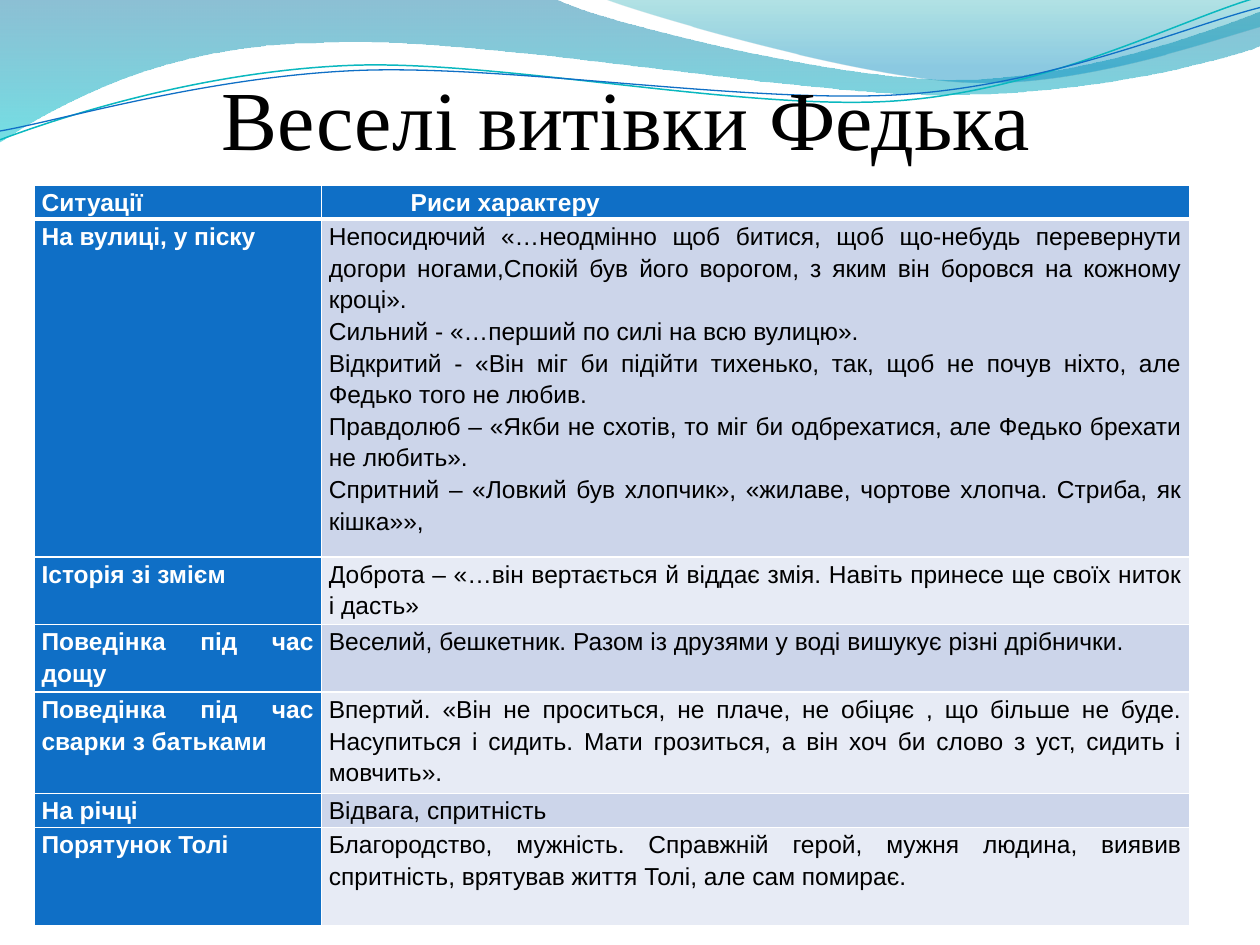
from lxml import etree
from pptx import Presentation
from pptx.dml.color import RGBColor
from pptx.enum.text import MSO_ANCHOR, MSO_AUTO_SIZE, PP_ALIGN
from pptx.oxml.ns import qn
from pptx.util import Inches, Pt

JUSTIFY = PP_ALIGN.JUSTIFY
MIDDLE = MSO_ANCHOR.MIDDLE
GROW = MSO_AUTO_SIZE.SHAPE_TO_FIT_TEXT
BLANK_LAYOUT = 6

COLORS = {
    "black": "000000", "white": "FFFFFF", "blue": "0F6FC6",
    "band_dark": "CCD5EA", "band_light": "E7EBF5", "teal_line": "0AB8BF",
    "deep_blue": "0074A1", "cyan": "00C6CF",
    "sea_green": "00A1A9", "sky_blue": "008BBF",
}
FONTS = {
    "title": {"name": "Times New Roman", "size": Pt(48)},
    "label": {"name": "Arial", "size": Pt(14), "bold": True},
    "body": {"name": "Arial", "size": Pt(14), "bold": False},
}

WAVES = [
    {"start": (0, -0.01), "closed": True,
     "segments": [
         (4.4, -0.01), (4.76, 0.17, 6.64, 0.63, 7.58, 0.63),
         (8.53, 0.63, 9.58, 0.26, 10, 0.09), (10.01, 0.36),
         (9.83, 0.44, 8.7, 0.76, 7.46, 0.75), (6.22, 0.75, 3.82, 0.28, 2.57, 0.34),
         (1.29, 0.35, 0.46, 0.83, -0.01, 1.13), (0, -0.01)],
     "gradient": [(0, "deep_blue", 45), (1, "cyan", 55)]},
    {"start": (4.79, -0.01), "closed": True,
     "segments": [
         (5.09, 0.11, 6.82, 0.62, 7.69, 0.65),
         (8.56, 0.69, 9.61, 0.32, 10, 0.21), (10, 0), (4.79, -0.01)],
     "gradient": [(0, "sea_green", 30), (0.8, "sky_blue", 45)]},
    {"start": (0, 1.11), "closed": False,
     "segments": [
         (0.48, 0.93, 1.58, 0.57, 2.77, 0.52), (3.95, 0.47, 5.93, 0.89, 7.13, 0.8),
         (8.33, 0.71, 9.38, 0.15, 9.98, -0.02)],
     "line": ("teal_line", 0.85)},
    {"start": (0, 1.04), "closed": False,
     "segments": [
         (0.47, 0.96, 1.64, 0.61, 2.83, 0.56), (4.03, 0.51, 5.97, 0.83, 7.17, 0.75),
         (8.36, 0.67, 9.41, 0.21, 10, 0.06)],
     "line": ("blue", 0.75)},
]

COLUMN_WIDTHS = [2.28, 6.89]
ROWS = [
    (0.26, "Ситуації", ["Риси характеру"]),
    (2.64, "На вулиці, у піску", [
        "Непосидючий «…неодмінно щоб битися, щоб що-небудь перевернути догори ногами,Спокій був його ворогом, з яким він боровся на кожному кроці».",
        "Сильний - «…перший по силі на всю вулицю».",
        "Відкритий - «Він міг би підійти тихенько, так, щоб не почув ніхто, але Федько того не любив.",
        "Правдолюб – «Якби не схотів, то міг би одбрехатися, але Федько брехати не любить».",
        "Спритний – «Ловкий був хлопчик», «жилаве, чортове хлопча. Стриба, як кішка»»,"]),
    (0.52, "Історія зі змієм", [
        "Доброта – «…він вертається й віддає змія. Навіть принесе ще своїх ниток і дасть»"]),
    (0.52, "Поведінка під час дощу", [
        "Веселий, бешкетник. Разом із друзями у воді вишукує різні дрібнички."]),
    (0.78, "Поведінка під час сварки з батьками", [
        "Впертий. «Він не проситься, не плаче, не обіцяє , що більше не буде. Насупиться і сидить. Мати грозиться, а він хоч би слово з уст, сидить і мовчить»."]),
    (0.26, "На річці", ["Відвага, спритність"]),
    (0.78, "Порятунок Толі", [
        "Благородство, мужність. Справжній герой, мужня людина, виявив спритність, врятував життя Толі, але сам помирає."]),
]


def color(name):
    return RGBColor.from_string(COLORS[name])


def set_attributes(target, values):
    for name, value in values.items():
        setattr(target, name, value)


def bend_segments(shape, segments):
    lines = list(shape._element.spPr.iter(qn("a:lnTo")))
    for line, segment in zip(lines, segments):
        if len(segment) == 2:
            continue
        curve = etree.Element(qn("a:cubicBezTo"))
        for x, y in zip(segment[::2], segment[1::2]):
            etree.SubElement(curve, qn("a:pt"), x=str(Inches(x) - shape.left),
                             y=str(Inches(y) - shape.top))
        line.getparent().replace(line, curve)


def fill_gradient(shape, stops):
    shape.fill.gradient()
    shape.fill.gradient_angle = 270
    for stop, (position, name, _) in zip(shape.fill.gradient_stops, stops):
        stop.position = position
        stop.color.rgb = color(name)
    tints = shape._element.spPr.iter(qn("a:srgbClr"))
    for tint, (_, _, opacity) in zip(tints, stops):
        etree.SubElement(tint, qn("a:alpha"), val=str(opacity * 1000))


def add_wave(slide, wave):
    x, y = wave["start"]
    builder = slide.shapes.build_freeform(Inches(x), Inches(y))
    ends = [(Inches(segment[-2]), Inches(segment[-1])) for segment in wave["segments"]]
    builder.add_line_segments(ends, close=wave["closed"])
    shape = builder.convert_to_shape()
    bend_segments(shape, wave["segments"])
    shape.shadow.inherit = False
    if "gradient" in wave:
        fill_gradient(shape, wave["gradient"])
        shape.line.fill.background()
    else:
        name, width = wave["line"]
        shape.fill.background()
        shape.line.color.rgb = color(name)
        shape.line.width = Pt(width)


def write_paragraphs(frame, texts, font, color_name, spacing=1.0):
    for index, text in enumerate(texts):
        paragraph = frame.paragraphs[0] if index == 0 else frame.add_paragraph()
        set_attributes(paragraph, {"alignment": JUSTIFY, "line_spacing": spacing})
        run = paragraph.add_run()
        run.text = text
        set_attributes(run.font, font)
        run.font.color.rgb = color(color_name)


def add_title(slide, text):
    box = slide.shapes.add_textbox(Inches(1.66), Inches(0.47), Inches(6.68), Inches(0.91))
    set_attributes(box.text_frame, {
        "word_wrap": False, "auto_size": GROW, "vertical_anchor": MIDDLE})
    write_paragraphs(box.text_frame, [text], FONTS["title"], "black")


def set_borders(cell, widths):
    properties = cell._tc.get_or_add_tcPr()
    for side, width in widths.items():
        line = etree.SubElement(properties, qn(f"a:ln{side}"), w=str(Pt(width)))
        solid = etree.SubElement(line, qn("a:solidFill"))
        etree.SubElement(solid, qn("a:srgbClr"), val=COLORS["white"])


def format_cell(cell, texts, row, column):
    header = row == 0
    label = header or column == 0
    indent = 0.65 if header and column == 1 else 0
    set_attributes(cell, {
        "margin_left": Inches(0.06 + indent), "margin_right": Inches(0.06),
        "margin_top": 0, "margin_bottom": 0})
    set_borders(cell, {"L": 1, "R": 1, "T": 3 if row == 1 else 1, "B": 3 if header else 1})
    band = "band_dark" if row % 2 else "band_light"
    cell.fill.solid()
    cell.fill.fore_color.rgb = color("blue" if label else band)
    write_paragraphs(cell.text_frame, texts, FONTS["label" if label else "body"],
                     "white" if label else "black", 1.15)


def add_traits_table(slide):
    frame = slide.shapes.add_table(
        len(ROWS), len(COLUMN_WIDTHS), Inches(0.27), Inches(1.47),
        Inches(sum(COLUMN_WIDTHS)), Inches(sum(height for height, _, _ in ROWS)))
    table = frame.table
    for column, width in zip(table.columns, COLUMN_WIDTHS):
        column.width = Inches(width)
    for row, (height, situation, traits) in enumerate(ROWS):
        table.rows[row].height = Inches(height)
        for column, texts in enumerate([[situation], traits]):
            format_cell(table.cell(row, column), texts, row, column)


def main():
    presentation = Presentation()
    set_attributes(presentation, {"slide_width": Inches(10), "slide_height": Inches(7.5)})
    slide = presentation.slides.add_slide(presentation.slide_layouts[BLANK_LAYOUT])
    for wave in WAVES:
        add_wave(slide, wave)
    add_title(slide, "Веселі витівки Федька")
    add_traits_table(slide)
    presentation.save("out.pptx")


if __name__ == "__main__":
    main()
